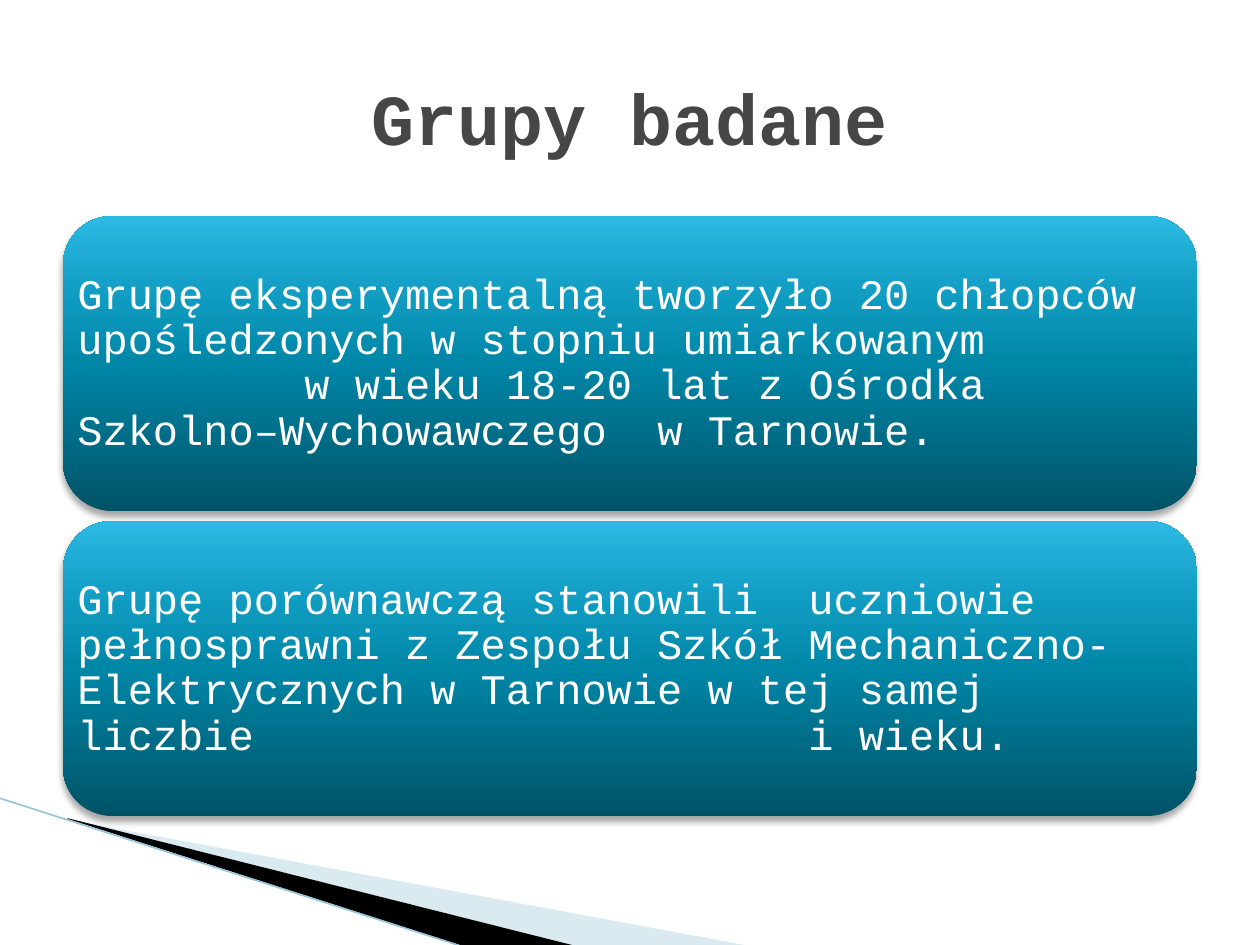
from lxml import etree
from pptx import Presentation
from pptx.dml.color import RGBColor
from pptx.enum.shapes import MSO_CONNECTOR, MSO_SHAPE
from pptx.enum.text import MSO_ANCHOR, PP_ALIGN
from pptx.oxml.ns import qn
from pptx.util import Pt

STRAIGHT = MSO_CONNECTOR.STRAIGHT
ROUNDED = MSO_SHAPE.ROUNDED_RECTANGLE
MIDDLE = MSO_ANCHOR.MIDDLE
LEFT, CENTER = PP_ALIGN.LEFT, PP_ALIGN.CENTER
PX = 914400 / 126

THEME = {
    "font": "Courier New",
    "title": "464646", "title_size": 41,
    "body": "FFFFFF", "body_size": 24,
    "pale": "A0CBDC", "dark": "000000", "edge": "97C5D8",
    "gradient": [(0, "005367"), (50, "0086A7"), (70, "0E9ABE"), (100, "2CB9E3")],
}


def px(length):
    return round(length * PX)


def write(frame, text, size, color, bold=False, align=LEFT, spacing=None, tabs=()):
    """Fill a frame with one paragraph; tabs are stops in px from the text's left edge."""
    frame.word_wrap = True
    frame.vertical_anchor = MIDDLE
    paragraph = frame.paragraphs[0]
    paragraph.text = text
    paragraph.alignment = align
    if tabs:
        stops = etree.SubElement(paragraph._p.get_or_add_pPr(), qn("a:tabLst"))
        for stop in tabs:
            etree.SubElement(stops, qn("a:tab"), pos=str(px(stop)), algn="l")
    if spacing:
        paragraph.line_spacing = spacing
    for run in paragraph.runs:
        run.font.name = THEME["font"]
        run.font.size = Pt(size)
        run.font.bold = bold
        run.font.color.rgb = RGBColor.from_string(color)


prs = Presentation()
prs.slide_width, prs.slide_height = px(1260), px(945)
slide = prs.slides.add_slide(prs.slide_layouts[5])

# Corner wedges
wedges = [
    ([(69, 820), (750, 946), (575, 946), (69, 819)], "pale", 40),
    ([(67, 818), (576, 946), (469, 948), (68, 819)], "dark", 100),
]
for points, color, opacity in wedges:
    outline = slide.shapes.build_freeform(*points[0], scale=PX)
    outline.add_line_segments(points[1:], close=True)
    wedge = outline.convert_to_shape()
    wedge.shadow.inherit = False
    wedge.line.fill.background()
    wedge.fill.solid()
    wedge.fill.fore_color.rgb = RGBColor.from_string(THEME[color])
    if opacity < 100:
        tint = wedge._element.spPr.find(".//" + qn("a:srgbClr"))
        etree.SubElement(tint, qn("a:alpha"), val=str(opacity * 1000))

edge = slide.shapes.add_connector(STRAIGHT, px(-1), px(798), px(467), px(948))
edge.line.color.rgb = RGBColor.from_string(THEME["edge"])
edge.line.width = Pt(0.95)
etree.SubElement(edge._element.spPr, qn("a:effectLst"))

# Study groups
groups = [
    ("Grupę eksperymentalną tworzyło 20 chłopców upośledzonych w stopniu "
     "umiarkowanym\v\tw wieku 18-20 lat z Ośrodka Szkolno–Wychowawczego\tw Tarnowie.",
     (227, 580)),
    ("Grupę porównawczą stanowili\tuczniowie pełnosprawni z Zespołu Szkół "
     "Mechaniczno-Elektrycznych w Tarnowie w tej samej liczbie\ti wieku.",
     (731,)),
]
for row, (description, tabs) in enumerate(groups):
    card = slide.shapes.add_shape(ROUNDED, px(63), px(216 + 305 * row), px(1134), px(295))
    card.line.fill.background()
    card.fill.gradient()
    card.fill.gradient_angle = 90
    stops = card._element.spPr.find(".//" + qn("a:gsLst"))
    stops.clear()
    for position, color in THEME["gradient"]:
        stop = etree.SubElement(stops, qn("a:gs"), pos=str(position * 1000))
        etree.SubElement(stop, qn("a:srgbClr"), val=color)

    card.shadow.inherit = False
    effects = card._element.spPr.find(qn("a:effectLst"))
    shadow = etree.SubElement(effects, qn("a:outerShdw"), blurRad=str(Pt(4)),
                              dist=str(Pt(3)), dir="5400000", rotWithShape="0")
    shade = etree.SubElement(shadow, qn("a:srgbClr"), val=THEME["dark"])
    etree.SubElement(shade, qn("a:alpha"), val="35000")

    frame = card.text_frame
    frame.margin_left = frame.margin_right = frame.margin_top = frame.margin_bottom = 0
    write(frame, description, THEME["body_size"], THEME["body"], spacing=0.9, tabs=tabs)

title = slide.shapes.title
title.left, title.top, title.width, title.height = px(63), px(38), px(1134), px(158)
write(title.text_frame, "Grupy badane", THEME["title_size"], THEME["title"],
      bold=True, align=CENTER)

prs.save("out.pptx")
